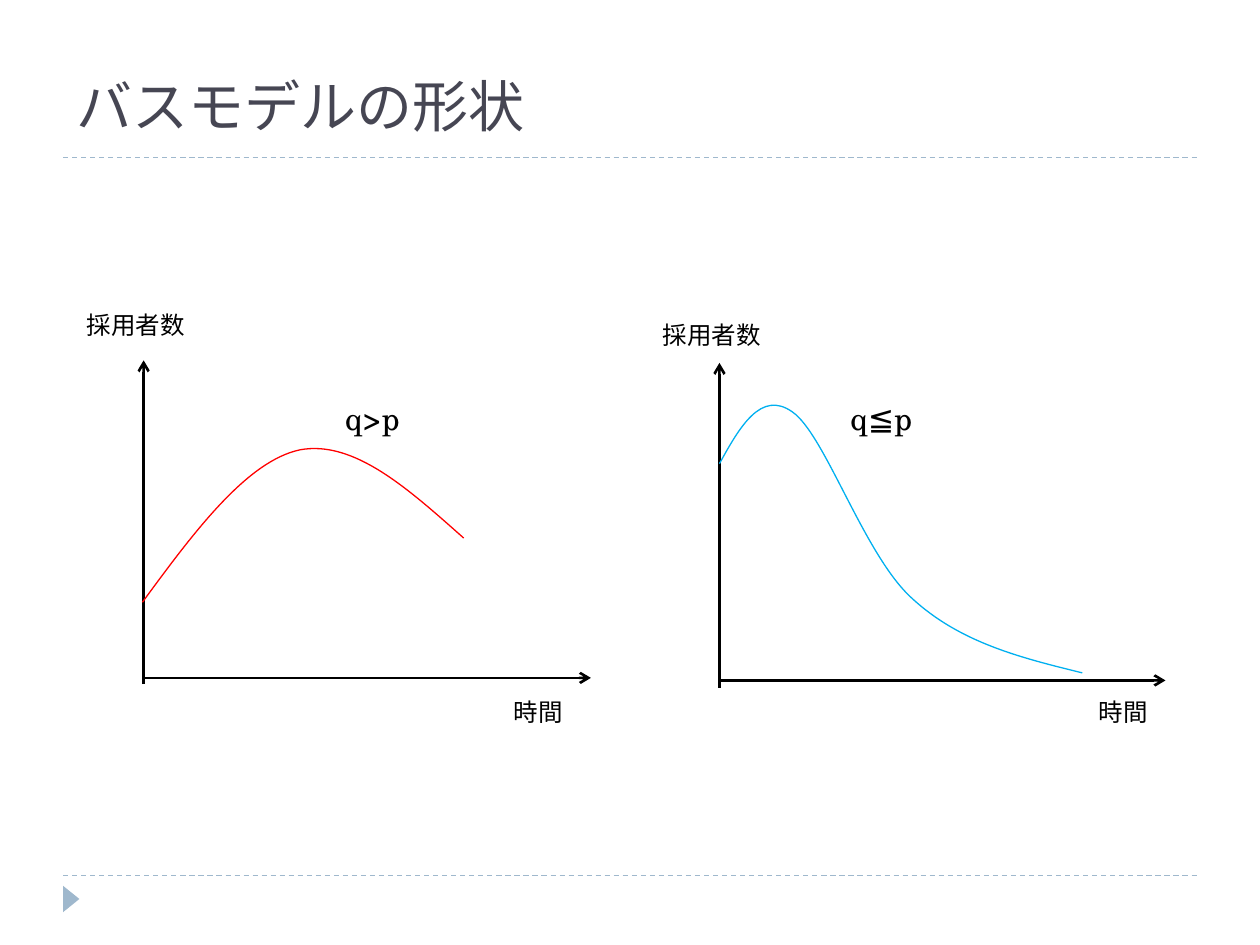
from lxml import etree
from pptx import Presentation
from pptx.dml.color import RGBColor
from pptx.enum.dml import MSO_LINE
from pptx.enum.shapes import MSO_CONNECTOR, MSO_SHAPE
from pptx.enum.text import MSO_ANCHOR, MSO_AUTO_SIZE, PP_ALIGN
from pptx.oxml.ns import qn
from pptx.util import Inches, Pt

STRAIGHT = MSO_CONNECTOR.STRAIGHT
TRIANGLE = MSO_SHAPE.ISOSCELES_TRIANGLE
DASH = MSO_LINE.DASH
BOTTOM = MSO_ANCHOR.BOTTOM
LEFT = PP_ALIGN.LEFT
NO_AUTOFIT = MSO_AUTO_SIZE.NONE
FIT_SHAPE = MSO_AUTO_SIZE.SHAPE_TO_FIT_TEXT

THEME = {
    "title": ("Roboto Slab", 32, "464653"),
    "axis label": ("Calibri", 14, "000000"),
    "condition": ("TeX Gyre Schola", 18, "000000"),
    "accent": "9FB8CD",
    "axis": "000000",
    "thin": 0.75,
    "thick": 1.5,
}

TITLE = "バスモデルの形状"
RULE_HEIGHTS = (6.95, 1.25)
RULE_SPAN = (0.5, 9.5)

# Axes: x of the vertical axis, its top and bottom, y and right end of the
# horizontal axis. Curves: a start, then Bézier pieces of three points each.
# Labels: text, style, left, top, width, height.
GRAPHS = [
    {
        "axes": (1.14, 2.86, 5.43, 5.38, 4.69),
        "color": "FF0000",
        "start": (1.13, 4.78),
        "pieces": [
            [(1.54, 4.22), (1.96, 3.66), (2.38, 3.57)],
            [(2.81, 3.49), (3.24, 3.88), (3.68, 4.27)],
        ],
        "labels": [
            ("採用者数", "axis label", 0.59, 2.41, 0.99, 0.34),
            ("時間", "axis label", 3.98, 5.48, 0.59, 0.34),
            ("q>p", "condition", 2.64, 3.12, 0.64, 0.4),
        ],
    },
    {
        "axes": (5.71, 2.88, 5.46, 5.4, 9.25),
        "color": "00B0F0",
        "start": (5.71, 3.68),
        "pieces": [
            [(5.87, 3.39), (6.04, 3.09), (6.29, 3.27)],
            [(6.55, 3.45), (6.86, 4.41), (7.24, 4.75)],
            [(7.62, 5.1), (8.1, 5.22), (8.59, 5.34)],
        ],
        "labels": [
            ("採用者数", "axis label", 5.16, 2.49, 0.99, 0.34),
            ("時間", "axis label", 8.62, 5.48, 0.59, 0.34),
            ("q≦p", "condition", 6.65, 3.12, 0.74, 0.4),
        ],
    },
]


def write_text(text_frame, text, style):
    text_frame.text = text
    font = text_frame.paragraphs[0].runs[0].font
    font.name, size, color = THEME[style]
    font.size = Pt(size)
    font.color.rgb = RGBColor.from_string(color)


def add_line(slide, start, end, color, width):
    points = [Inches(value) for value in (*start, *end)]
    connector = slide.shapes.add_connector(STRAIGHT, *points)
    connector.line.color.rgb = RGBColor.from_string(color)
    connector.line.width = Pt(width)
    etree.SubElement(connector._element.spPr, qn("a:effectLst"))
    return connector


def add_axis(slide, start, end):
    axis = add_line(slide, start, end, THEME["axis"], THEME["thick"])
    etree.SubElement(axis.line._get_or_add_ln(), qn("a:tailEnd"), type="arrow")


def bend_segments(shape):
    """Turn every three straight segments into one cubic Bézier segment."""
    segments = list(shape._element.iter(qn("a:lnTo")))
    outline = segments[0].getparent()
    for first in range(0, len(segments), 3):
        bend = etree.SubElement(outline, qn("a:cubicBezTo"))
        for segment in segments[first:first + 3]:
            bend.append(segment[0])
            outline.remove(segment)


def add_curve(slide, start, pieces, color):
    points = [(Inches(x), Inches(y)) for piece in pieces for x, y in piece]
    builder = slide.shapes.build_freeform(Inches(start[0]), Inches(start[1]))
    builder.add_line_segments(points, close=False)
    curve = builder.convert_to_shape()
    bend_segments(curve)
    curve.shadow.inherit = False
    curve.fill.background()
    curve.line.color.rgb = RGBColor.from_string(color)
    curve.line.width = Pt(THEME["thin"])


def add_label(slide, text, style, *box):
    label = slide.shapes.add_textbox(*map(Inches, box))
    label.text_frame.word_wrap = False
    label.text_frame.auto_size = FIT_SHAPE
    write_text(label.text_frame, text, style)


def add_frame(slide):
    """Add the dashed rules, the corner marker and the title."""
    left, right = RULE_SPAN
    for y in RULE_HEIGHTS:
        rule = add_line(slide, (left, y), (right, y), THEME["accent"], THEME["thin"])
        rule.line.dash_style = DASH

    marker = slide.shapes.add_shape(
        TRIANGLE, Inches(0.46), Inches(7.07), Inches(0.21), Inches(0.13))
    marker.rotation = 90
    marker.shadow.inherit = False
    marker.fill.solid()
    marker.fill.fore_color.rgb = RGBColor.from_string(THEME["accent"])
    marker.line.fill.background()

    title = slide.shapes.title
    title.left, title.top = Inches(0.51), Inches(0.36)
    title.width, title.height = Inches(9), Inches(0.79)
    write_text(title.text_frame, TITLE, "title")
    title.text_frame.auto_size = NO_AUTOFIT
    title.text_frame.vertical_anchor = BOTTOM
    title.text_frame.paragraphs[0].alignment = LEFT


def add_graph(slide, graph):
    x, top, bottom, baseline, right = graph["axes"]
    add_axis(slide, (x, bottom), (x, top))
    add_axis(slide, (x, baseline), (right, baseline))
    add_curve(slide, graph["start"], graph["pieces"], graph["color"])
    for label in graph["labels"]:
        add_label(slide, *label)


def main():
    presentation = Presentation()
    presentation.slide_width, presentation.slide_height = Inches(10), Inches(7.5)
    title_only = presentation.slide_layouts.get_by_name("Title Only")
    slide = presentation.slides.add_slide(title_only)
    add_frame(slide)
    for graph in GRAPHS:
        add_graph(slide, graph)
    presentation.save("out.pptx")


if __name__ == "__main__":
    main()
